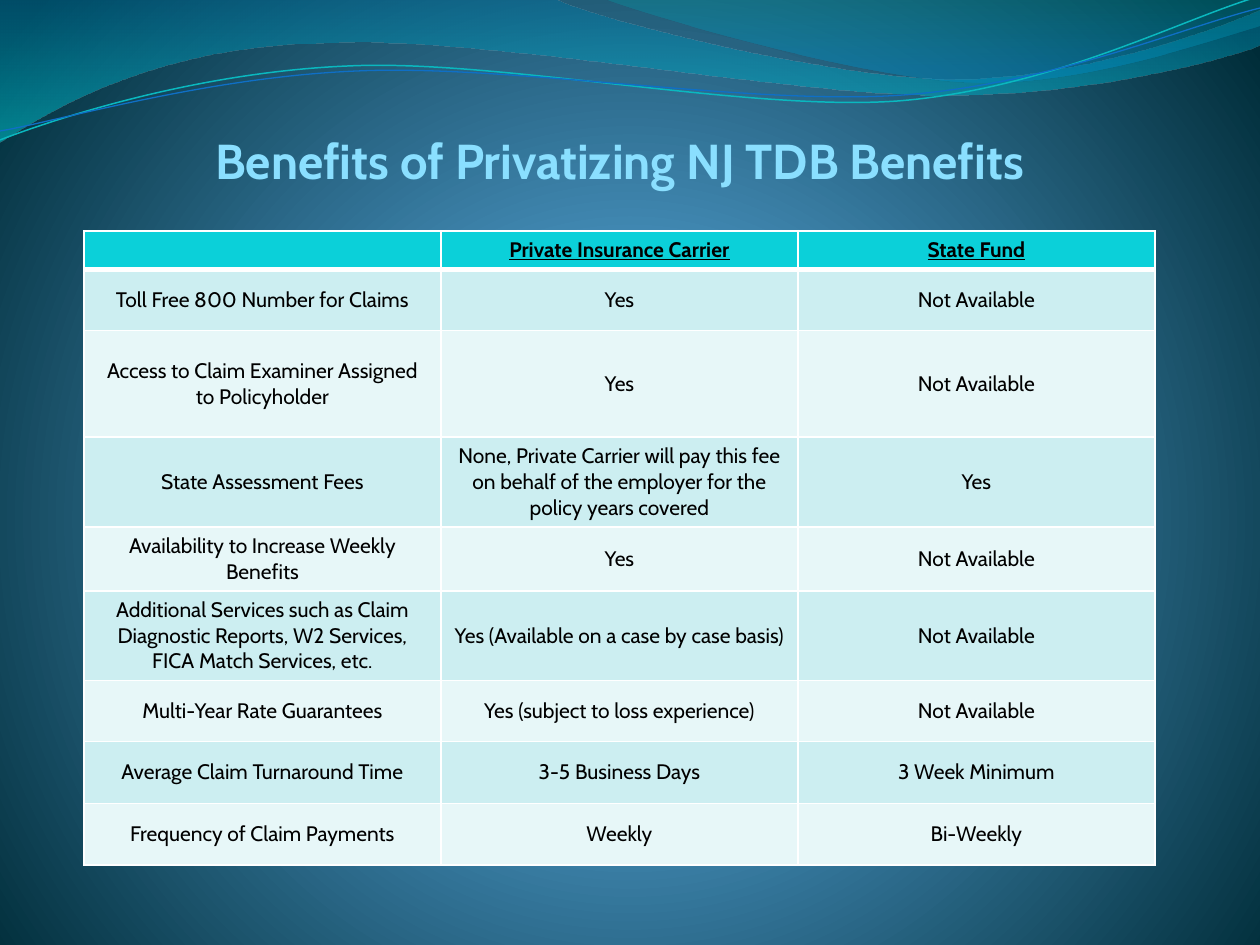
"""Build the slide comparing private carriers with the state fund for NJ TDB benefits."""
from math import cos, radians, sin
from lxml.etree import SubElement
from pptx import Presentation
from pptx.dml.color import RGBColor
from pptx.enum.text import MSO_ANCHOR as Anchor, PP_ALIGN as Align
from pptx.oxml import parse_xml
from pptx.oxml.ns import nsdecls, qn
from pptx.util import Pt

PX = 914400 / 126
FONT = "Cabin"


def color(value):
    return RGBColor.from_string(value)


def set_gradient(fill, owner, stops, direction):
    fill.gradient()
    gradient = owner.find(".//" + qn("a:gradFill"))
    marks = "".join(
        f'<a:gs pos="{pos * 1000}"><a:srgbClr val="{value}"><a:alpha val="{alpha * 1000}"/></a:srgbClr></a:gs>'
        for pos, value, alpha in stops)
    gradient.getparent().replace(gradient, parse_xml(
        f'<a:gradFill {nsdecls("a")} rotWithShape="1"><a:gsLst>{marks}</a:gsLst>{direction}</a:gradFill>'))


prs = Presentation()
prs.slide_width, prs.slide_height = round(1260 * PX), round(945 * PX)
slide = prs.slides.add_slide(prs.slide_layouts[6])
set_gradient(slide.background.fill, slide.element,
             [(0, "4AA0D6", 100), (25, "4C98C7", 100), (100, "002C38", 100)],
             '<a:path path="circle"><a:fillToRect l="10000" t="110000" r="10000" b="100000"/></a:path>')

waves = [
    ([(0, 0), (554, -1), (600, 21, 837, 79, 955, 79), (1075, 79, 1207, 33, 1260, 11), (1261, 45),
      (1239, 55, 1096, 96, 940, 95), (784, 95, 481, 35, 324, 43), (163, 45, 58, 105, -1, 142)],
     [(0, "0074A1", 45), (100, "00C6CF", 55)], None, 0, 0),
    ([(604, -1), (641, 14, 859, 78, 969, 82), (1079, 87, 1211, 40, 1260, 26), (1260, 0)],
     [(0, "00A1A9", 30), (80, "008BBF", 45)], None, 0, 0),
    ([(0, 140), (60, 117, 199, 72, 349, 66), (498, 59, 747, 112, 898, 101), (1050, 89, 1182, 19, 1257, -3)],
     None, "0AB8BF", 0.85, -2.7),
    ([(0, 131), (59, 121, 207, 77, 357, 71), (508, 64, 752, 106, 903, 95), (1053, 84, 1186, 26, 1260, 8)],
     None, "0F6FC6", 0.75, -2.7),
]
PIVOT_X, PIVOT_Y = 629, 73
for steps, stops, line_color, line_width, tilt in waves:
    turn = radians(-tilt)
    curve = []
    for step in steps:
        offsets = [(x - PIVOT_X, y - PIVOT_Y) for x, y in zip(step[::2], step[1::2])]
        curve.append([(round((PIVOT_X + dx * cos(turn) - dy * sin(turn)) * PX),
                       round((PIVOT_Y + dx * sin(turn) + dy * cos(turn)) * PX)) for dx, dy in offsets])
    anchors = [points[-1] for points in curve]
    builder = slide.shapes.build_freeform(*anchors[0], scale=1.0)
    builder.add_line_segments(anchors[1:], close=stops is not None)
    wave = builder.convert_to_shape()
    for segment, points in zip(wave.element.findall(".//" + qn("a:lnTo")), curve[1:]):
        if len(points) == 3:
            bezier = "".join(f'<a:pt x="{x - wave.left}" y="{y - wave.top}"/>' for x, y in points)
            segment.getparent().replace(segment, parse_xml(
                f'<a:cubicBezTo {nsdecls("a")}>{bezier}</a:cubicBezTo>'))
    wave.rotation = tilt
    wave.shadow.inherit = False
    if stops:
        set_gradient(wave.fill, wave.element, stops, '<a:lin ang="5400000" scaled="0"/>')
        wave.line.fill.background()
    else:
        wave.fill.background()
        wave.line.color.rgb = color(line_color)
        wave.line.width = Pt(line_width)

rows = [
    ("", "Private Insurance Carrier", "State Fund"),
    ("Toll Free 800 Number for Claims", "Yes", "Not Available"),
    ("Access to Claim Examiner Assigned to Policyholder", "Yes", "Not Available"),
    ("State Assessment Fees",
     "None, Private Carrier will pay this fee on behalf of the employer for the policy years covered", "Yes"),
    ("Availability to Increase Weekly Benefits", "Yes", "Not Available"),
    ("Additional Services such as Claim Diagnostic Reports, W2 Services, FICA Match Services, etc.",
     "Yes (Available on a case by case basis)", "Not Available"),
    ("Multi-Year Rate Guarantees", "Yes (subject to loss experience)", "Not Available"),
    ("Average Claim Turnaround Time", "3-5 Business Days", "3 Week Minimum"),
    ("Frequency of Claim Payments", "Weekly", "Bi-Weekly"),
]
heights = [21, 61, 107, 62, 62, 62, 61, 62, 62]
frame = slide.shapes.add_table(len(rows), 3, round(84 * PX), round(231 * PX), round(1071 * PX), round(630 * PX))
benefits = frame.table
benefits.horz_banding = False
for column in benefits.columns:
    column.width = round(357 * PX)
for r, (texts, height) in enumerate(zip(rows, heights)):
    benefits.rows[r].height = round(height * PX)
    header = r == 0
    for c, text in enumerate(texts):
        cell = benefits.cell(r, c)
        cell.vertical_anchor = Anchor.MIDDLE
        props = cell._tc.get_or_add_tcPr()
        for side in "LRTB":
            thick = (r, side) in [(0, "B"), (1, "T")]
            border = SubElement(props, qn("a:ln" + side), w=str(Pt(3 if thick else 1)))
            SubElement(SubElement(border, qn("a:solidFill")), qn("a:srgbClr"), val="FFFFFF")
        cell.fill.solid()
        cell.fill.fore_color.rgb = color("0BD0D9" if header else "CCEEF1" if r % 2 else "E7F7F8")
        paragraph = cell.text_frame.paragraphs[0]
        paragraph.alignment = Align.CENTER
        if not text:
            SubElement(paragraph._p, qn("a:endParaRPr"), sz="1200")
            continue
        paragraph.text = text
        font = paragraph.runs[0].font
        font.name, font.size = FONT, Pt(12)
        font.bold = font.underline = header
        font.color.rgb = color("000000")
frame.height = round(630 * PX)

title = slide.shapes.add_textbox(round(84 * PX), round(1 * PX), round(1071 * PX), round(188 * PX)).text_frame
title.word_wrap = True
title.vertical_anchor = Anchor.BOTTOM
title.margin_left = title.margin_top = title.margin_right = title.margin_bottom = 0
title.text = "Benefits of Privatizing NJ TDB Benefits"
heading = title.paragraphs[0]
heading.alignment = Align.CENTER
font = heading.runs[0].font
font.name, font.size, font.bold = FONT, Pt(28), True
font.color.rgb = color("8ADFFF")

prs.save("out.pptx")
